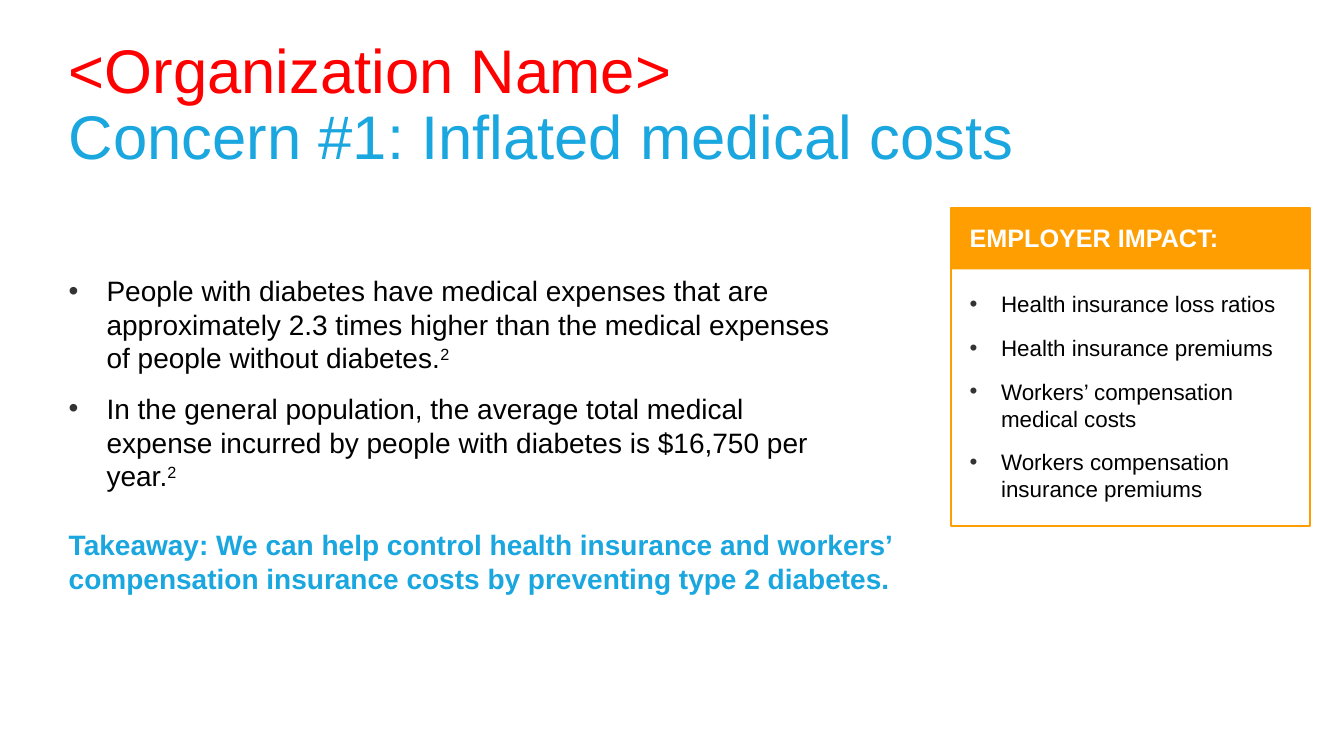
from lxml import etree
from pptx import Presentation
from pptx.dml.color import RGBColor
from pptx.enum import shapes, text
from pptx.oxml import ns
from pptx.util import Pt

COLORS = {"red": "FF0000", "blue": "1AA6DE", "orange": "FF9E00",
          "black": "000000", "white": "FFFFFF", "bullet": "333333"}


def add_text(box, lines, size, color, bold=False, after=0, indent=0):
    """Add a text box; each line is a string or a (string, superscript) pair."""
    tf = s.shapes.add_textbox(*map(Pt, box)).text_frame
    tf.word_wrap = True
    tf.vertical_anchor = text.MSO_ANCHOR.TOP
    for i, line in enumerate(lines):
        p = tf.paragraphs[0] if i == 0 else tf.add_paragraph()
        p.space_after = Pt(after)
        if indent:
            add_bullet(p, indent)
        parts = (line,) if isinstance(line, str) else line
        for j, part in enumerate(parts):
            r = p.add_run()
            r.text = part
            r.font.name = "Arial"
            r.font.size = Pt(size)
            r.font.bold = bold
            r.font.color.rgb = RGBColor.from_string(COLORS[color])
            if j:
                r.font._element.set("baseline", "30000")
    return tf


def add_bullet(p, indent):
    pPr = p._p.get_or_add_pPr()
    pPr.set("marL", str(Pt(indent)))
    pPr.set("indent", str(-Pt(indent)))
    clr = etree.SubElement(pPr, ns.qn("a:buClr"))
    etree.SubElement(clr, ns.qn("a:srgbClr"), val=COLORS["bullet"])
    etree.SubElement(pPr, ns.qn("a:buFont"), typeface="Arial")
    etree.SubElement(pPr, ns.qn("a:buChar"), char="•")


prs = Presentation()
prs.slide_width, prs.slide_height = Pt(960), Pt(540)
s = prs.slides.add_slide(prs.slide_layouts[6])

LEFT = 42
PANEL_LEFT, PANEL_TOP, PANEL_WIDTH = 679, 148.5, 256.5
PANEL_TEXT_LEFT, PANEL_TEXT_WIDTH = 685.5, 250

# Title
title = add_text((LEFT, 25, 918, 130),
                 ["<Organization Name>", "Concern #1: Inflated medical costs"],
                 44, "blue")
for p in title.paragraphs:
    p.line_spacing = 0.9
title.paragraphs[0].runs[0].font.color.rgb = RGBColor.from_string(COLORS["red"])

# Main points and takeaway
add_text((LEFT, 192, 578, 140), [
    ("People with diabetes have medical expenses that are approximately 2.3 times "
     "higher than the medical expenses of people without diabetes.", "2"),
    ("In the general population, the average total medical expense incurred by "
     "people with diabetes is $16,750 per year.", "2"),
], 20, "black", after=12, indent=27)
add_text((LEFT, 373.5, 741, 55.5), [
    "Takeaway: We can help control health insurance and workers’ compensation "
    "insurance costs by preventing type 2 diabetes.",
], 20, "blue", bold=True)

# Employer impact panel
header, frame = [
    s.shapes.add_shape(shapes.MSO_SHAPE.RECTANGLE, Pt(PANEL_LEFT), Pt(PANEL_TOP),
                       Pt(PANEL_WIDTH), Pt(height))
    for height in (44, 227.5)]
header.shadow.inherit = frame.shadow.inherit = False
header.fill.solid()
header.fill.fore_color.rgb = RGBColor.from_string(COLORS["orange"])
header.line.fill.background()
frame.fill.background()
frame.line.color.rgb = RGBColor.from_string(COLORS["orange"])
frame.line.width = Pt(1.5)

add_text((PANEL_TEXT_LEFT, 155.5, PANEL_TEXT_WIDTH, 29), ["EMPLOYER IMPACT:"],
         18, "white", bold=True, after=12)
add_text((PANEL_TEXT_LEFT, 204, PANEL_TEXT_WIDTH, 160), [
    "Health insurance loss ratios",
    "Health insurance premiums",
    "Workers’ compensation medical costs",
    "Workers compensation insurance premiums",
], 16, "black", after=12, indent=22.5)

prs.save("out.pptx")
